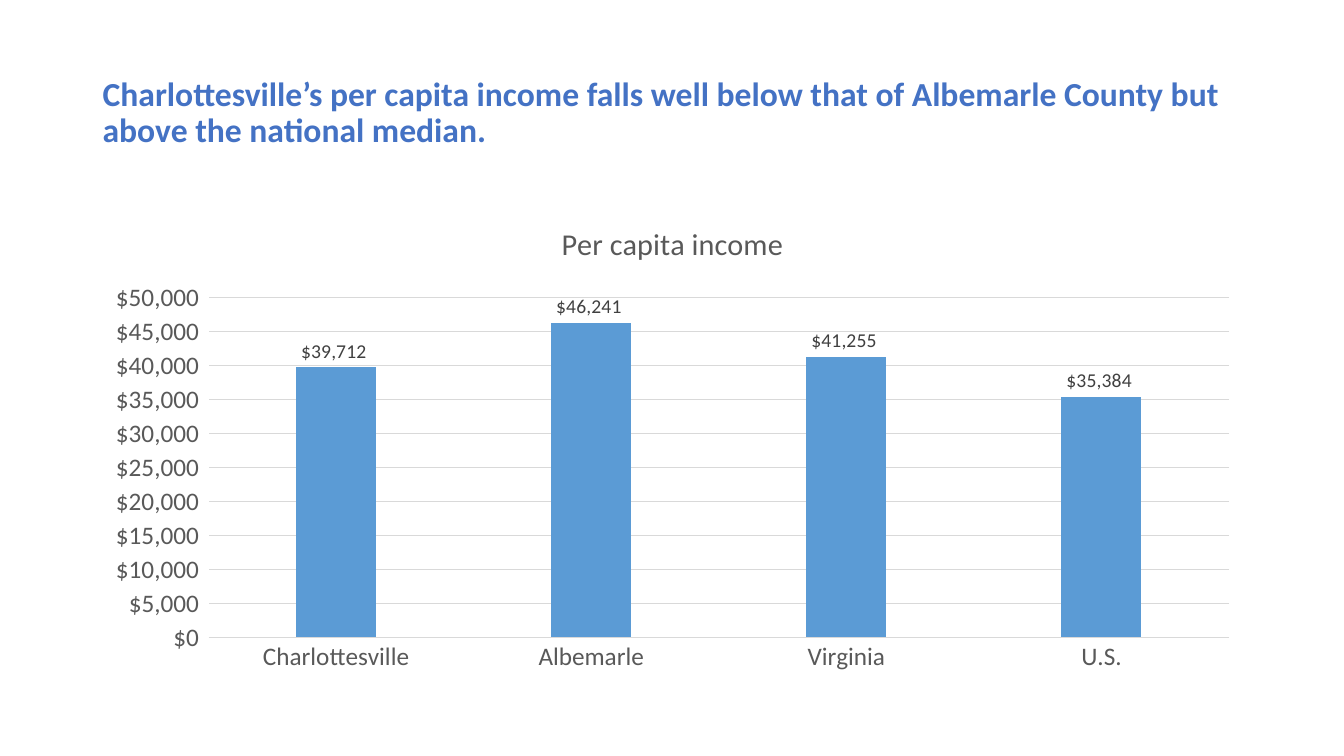
from dataclasses import dataclass

from pptx import Presentation
from pptx.chart.data import CategoryChartData
from pptx.dml.color import RGBColor
from pptx.enum.chart import XL_CHART_TYPE as ChartType
from pptx.enum.chart import XL_LABEL_POSITION as LabelPosition
from pptx.enum.chart import XL_TICK_MARK as TickMark
from pptx.enum.text import MSO_ANCHOR as Anchor
from pptx.util import Inches, Pt


@dataclass(frozen=True)
class Theme:
    font: str = "Calibri"
    headline: str = "4472C4"
    bar: str = "5B9BD5"
    axis_text: str = "595959"
    label_text: str = "404040"
    rule: str = "D9D9D9"
    headline_size: float = 24
    chart_title_size: float = 21.6
    axis_size: float = 18
    label_size: float = 14
    rule_width: float = 0.75


theme = Theme()
DOLLARS = '"$"#,##0_);[Red]\\("$"#,##0\\)'
LEFT, WIDTH = Inches(0.92), Inches(11.5)


def style_font(font, size, color, bold=False):
    font.name = theme.font
    font.size = Pt(size)
    font.bold = bold
    font.color.rgb = RGBColor.from_string(color)


def style_rule(line):
    line.color.rgb = RGBColor.from_string(theme.rule)
    line.width = Pt(theme.rule_width)


# Slide
prs = Presentation()
prs.slide_width, prs.slide_height = Inches(13.33), Inches(7.5)
slide = prs.slides.add_slide(prs.slide_layouts[6])

# Headline
headline = slide.shapes.add_textbox(LEFT, Inches(0.4), WIDTH, Inches(1.45)).text_frame
headline.word_wrap = True
headline.vertical_anchor = Anchor.MIDDLE
sentence = headline.paragraphs[0]
sentence.line_spacing = 0.9
run = sentence.add_run()
run.text = (
    "Charlottesville’s per capita income falls well below that of "
    "Albemarle County but above the national median."
)
style_font(run.font, theme.headline_size, theme.headline, bold=True)

# Income chart
incomes = {
    "Charlottesville": 39712,
    "Albemarle": 46241,
    "Virginia": 41255,
    "U.S.": 35384,
}
income_data = CategoryChartData(number_format=DOLLARS)
income_data.categories = list(incomes)
income_data.add_series("Per capita income", list(incomes.values()))
chart = slide.shapes.add_chart(
    ChartType.COLUMN_CLUSTERED, LEFT, Inches(2), WIDTH, Inches(4.76), income_data
).chart
style_font(chart.font, theme.axis_size, theme.axis_text)
chart.has_legend = False

# Chart title
chart.has_title = True
chart.chart_title.include_in_layout = False
chart_title = chart.chart_title.text_frame.paragraphs[0].add_run()
chart_title.text = "Per capita income"
style_font(chart_title.font, theme.chart_title_size, theme.axis_text)

# Axes
places, dollars = chart.category_axis, chart.value_axis
for axis in (places, dollars):
    axis.major_tick_mark = axis.minor_tick_mark = TickMark.NONE
    style_font(axis.tick_labels.font, theme.axis_size, theme.axis_text)
style_rule(places.format.line)
dollars.minimum_scale, dollars.maximum_scale = 0, 50000
dollars.major_unit = 5000
dollars.format.line.fill.background()
dollars.has_major_gridlines = True
style_rule(dollars.major_gridlines.format.line)
dollars.tick_labels.number_format = DOLLARS
dollars.tick_labels.number_format_is_linked = False

# Bars and their values
plot = chart.plots[0]
plot.gap_width, plot.overlap = 219, -27
plot.vary_by_categories = False
bars = plot.series[0]
bars.invert_if_negative = False
bars.format.fill.solid()
bars.format.fill.fore_color.rgb = RGBColor.from_string(theme.bar)
values = bars.data_labels
values.show_value = True
values.position = LabelPosition.OUTSIDE_END
values.number_format = DOLLARS
values.number_format_is_linked = False
style_font(values.font, theme.label_size, theme.label_text)

prs.save("out.pptx")
